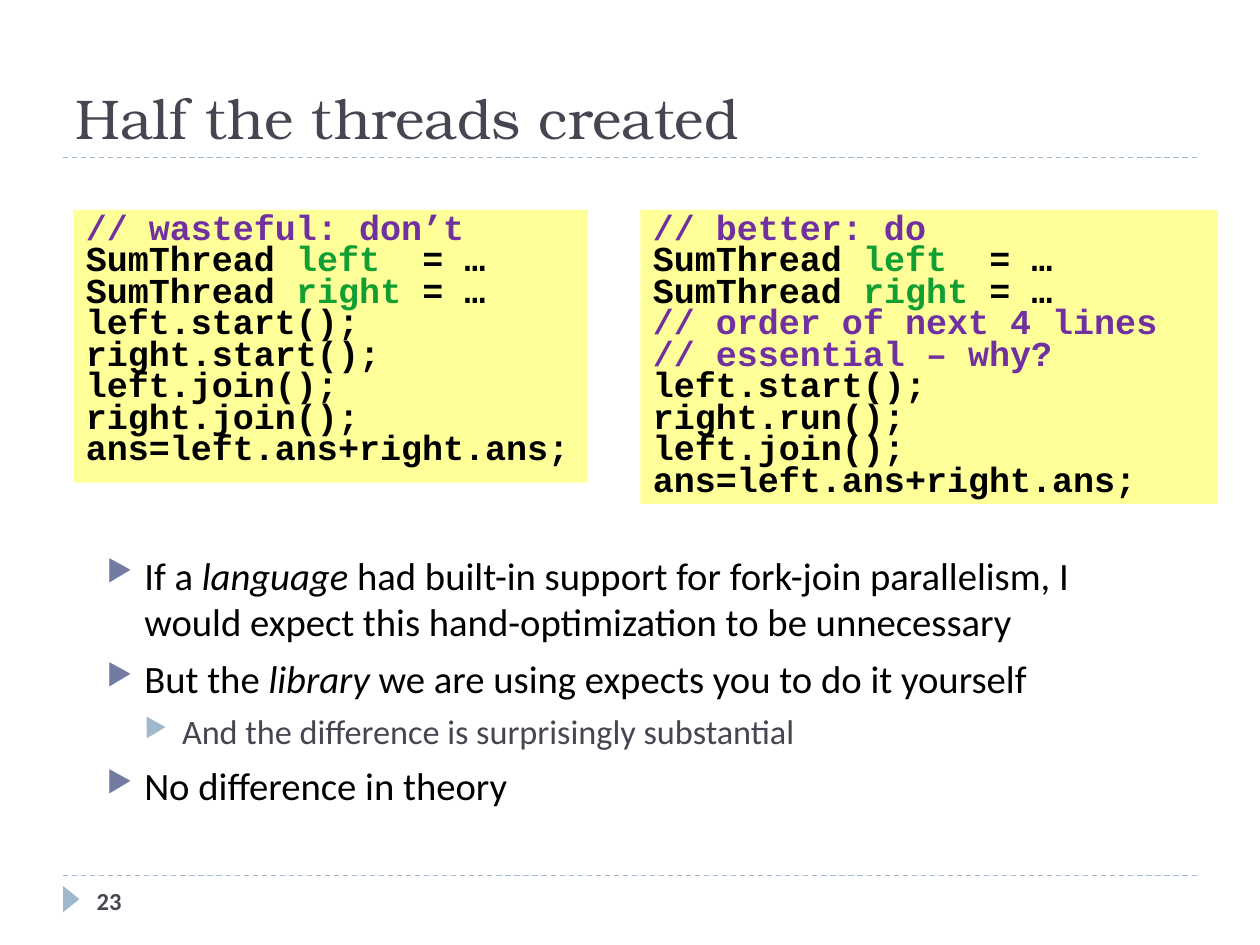
from lxml import etree
from pptx import Presentation
from pptx import util as u
from pptx.dml.color import RGBColor
from pptx.enum import dml, shapes, text
from pptx.oxml import ns

BLACK = RGBColor(0, 0, 0)
SLATE = RGBColor(0x46, 0x46, 0x53)
BLUE = RGBColor(0x9F, 0xB8, 0xCD)
INDIGO = RGBColor(0x72, 0x7C, 0xA3)
YELLOW = RGBColor(0xFF, 0xFF, 0x99)
PURPLE = RGBColor(0x70, 0x30, 0xA0)
GREEN = RGBColor(0x11, 0x9F, 0x33)


def write(para, words, font="Calibri", size=14, color=BLACK, bold=False, italic=False):
    run = para.add_run()
    run.text = words
    face = run.font
    face.name, face.size = font, u.Pt(size)
    face.bold, face.italic = bold, italic
    face.color.rgb = color


def lines(frame, count):
    return [frame.paragraphs[0]] + [frame.add_paragraph() for _ in range(count - 1)]


def place(shape, left, top, width, height):
    shape.left, shape.top = u.Cm(left), u.Cm(top)
    shape.width, shape.height = u.Cm(width), u.Cm(height)


class Deck:
    def __init__(self):
        self.file = Presentation()
        self.file.slide_width = u.Cm(25.4)
        self.file.slide_height = u.Cm(19.05)
        self.page = self.file.slides.add_slide(self.file.slide_layouts[5])
        self.code_font = "Courier New"
        self.head_font = "TeX Gyre Bonum"

    def title(self, words):
        head = self.page.shapes.title
        place(head, 1.27, 0.43, 22.86, 2.74)
        head.text_frame.vertical_anchor = text.MSO_ANCHOR.BOTTOM
        para = head.text_frame.paragraphs[0]
        para.alignment = text.PP_ALIGN.LEFT
        write(para, words, font=self.head_font, size=32, color=SLATE)

    def rule(self, top):
        line = self.page.shapes.add_connector(
            shapes.MSO_CONNECTOR.STRAIGHT, u.Cm(1.27), u.Cm(top), u.Cm(24.13), u.Cm(top))
        line.line.color.rgb = BLUE
        line.line.width = u.Pt(0.75)
        line.line.dash_style = dml.MSO_LINE.DASH
        etree.SubElement(line._element.spPr, ns.qn("a:effectLst"))

    def shape(self, kind, left, top, width, height, fill):
        item = self.page.shapes.add_shape(
            kind, u.Cm(left), u.Cm(top), u.Cm(width), u.Cm(height))
        item.shadow.inherit = False
        item.fill.solid()
        item.fill.fore_color.rgb = fill
        item.line.fill.background()
        return item

    def box(self, left, top, width, height):
        item = self.page.shapes.add_textbox(
            u.Cm(left), u.Cm(top), u.Cm(width), u.Cm(height))
        item.text_frame.word_wrap = True
        return item.text_frame

    def number(self, words):
        mark = self.shape(shapes.MSO_SHAPE.ISOSCELES_TRIANGLE, 1.17, 17.96, 0.53, 0.33, BLUE)
        mark.rotation = 90
        frame = self.box(1.7, 17.65, 5.51, 1.02)
        frame.vertical_anchor = text.MSO_ANCHOR.MIDDLE
        write(frame.paragraphs[0], words, color=SLATE, bold=True)

    def code(self, left, width, height, rows):
        frame = self.shape(
            shapes.MSO_SHAPE.RECTANGLE, left, 4.23, width, height, YELLOW).text_frame
        frame.word_wrap = True
        frame.vertical_anchor = text.MSO_ANCHOR.TOP
        for para, row in zip(lines(frame, len(rows)), rows):
            para.alignment = text.PP_ALIGN.LEFT
            para.line_spacing = u.Pt(18)
            for words, color in row:
                write(para, words, font=self.code_font, size=20, color=color, bold=True)

    def bullet(self, para, level, color):
        props = para._p.get_or_add_pPr()
        props.set("marL", str(u.Cm(0.76 * (level + 1))))
        props.set("indent", str(u.Cm(-0.76)))
        tint = etree.SubElement(props, ns.qn("a:buClr"))
        etree.SubElement(tint, ns.qn("a:srgbClr"), val=str(color))
        etree.SubElement(props, ns.qn("a:buSzPct"), val="76000")
        etree.SubElement(props, ns.qn("a:buChar"), char="▶")

    def points(self, rows):
        frame = self.box(1.9, 11, 21.6, 5.28)
        looks = [(22.1, BLACK, INDIGO, 6), (19.6, SLATE, BLUE, 5)]
        for para, (level, parts) in zip(lines(frame, len(rows)), rows):
            size, color, tint, gap = looks[level]
            para.level = level
            para.space_before = u.Pt(gap)
            self.bullet(para, level, tint)
            for place_no, words in enumerate(parts):
                write(para, words, size=size, color=color, italic=place_no == 1)


def note(words):
    return [(words, PURPLE)]


def plain(words):
    return [(words, BLACK)]


def main():
    deck = Deck()
    for top in (17.65, 3.18):
        deck.rule(top)
    deck.title("Half the threads created")
    deck.number("23")
    deck.points([
        (0, ["If a ", "language", " had built-in support for fork-join parallelism, "
             "I would expect this hand-optimization to be unnecessary"]),
        (0, ["But the ", "library", " we are using expects you to do it yourself"]),
        (1, ["And the difference is surprisingly substantial"]),
        (0, ["No difference in theory"]),
    ])
    setup = [[("SumThread ", BLACK), (name, GREEN), (rest, BLACK)]
             for name, rest in (("left", "  = …"), ("right ", "= …"))]
    start, join, total = (plain(words) for words in (
        "left.start();", "left.join();", "ans=left.ans+right.ans;"))
    deck.code(1.48, 10.37, 5.5, [
        note("// wasteful: don’t"), *setup, start, plain("right.start();"),
        join, plain("right.join();"), total])
    deck.code(12.91, 11.64, 5.93, [
        note("// better: do"), *setup, note("// order of next 4 lines"),
        note("// essential – why?"), start, plain("right.run();"), join, total])
    deck.file.save("out.pptx")


if __name__ == "__main__":
    main()
